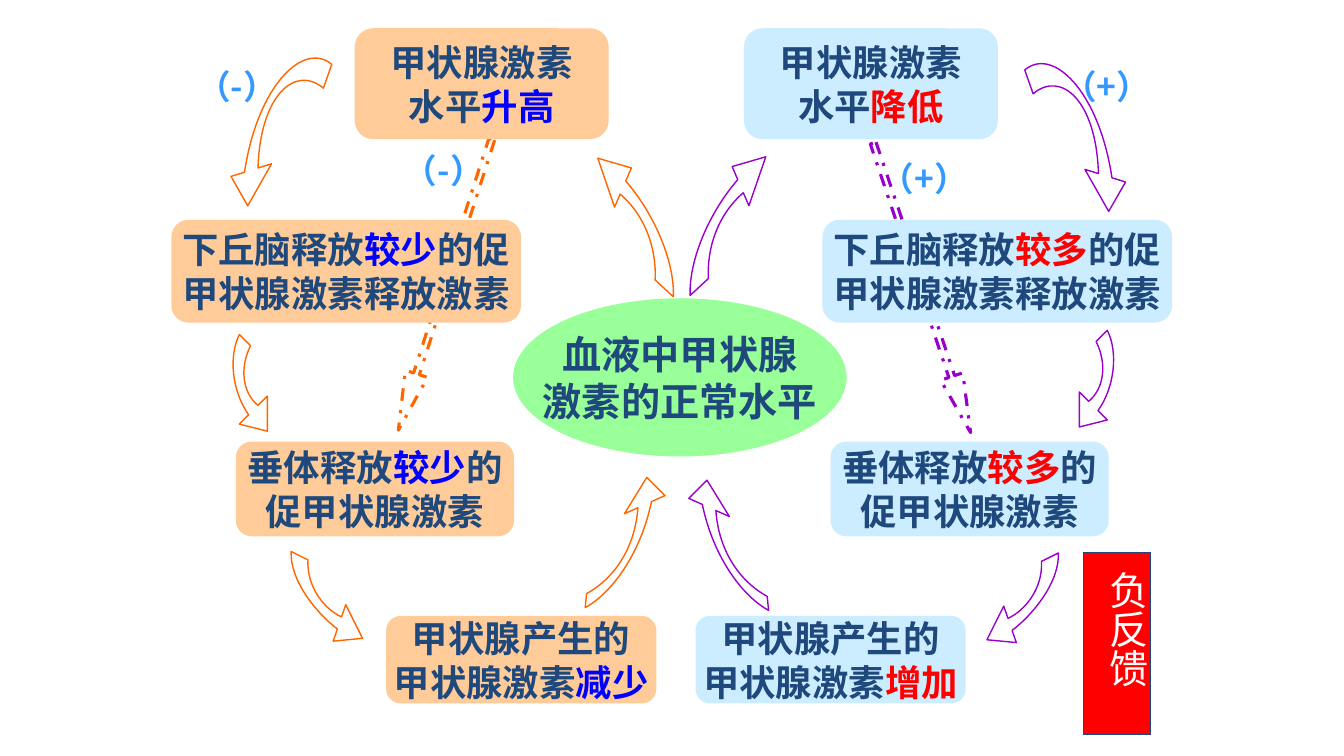
from dataclasses import dataclass

import lxml.etree
import pptx
import pptx.dml.color
import pptx.enum.dml
import pptx.enum.shapes
import pptx.enum.text
import pptx.oxml.ns
import pptx.util

Pt = pptx.util.Pt
SHAPE = pptx.enum.shapes.MSO_SHAPE
ALIGN = pptx.enum.text.PP_ALIGN
ANCHOR = pptx.enum.text.MSO_ANCHOR
qn = pptx.oxml.ns.qn


@dataclass(frozen=True)
class Theme:
    latin: str = "Calibri"
    cjk: str = "Noto Sans CJK SC"
    ink: str = "1F497D"
    white: str = "FFFFFF"
    sign: str = "3399FF"
    center: str = "99FF99"
    banner: str = "FF0000"
    sign_size: int = 24
    box_size: int = 26
    large_size: int = 28


@dataclass(frozen=True)
class Branch:
    fill: str
    accent: str
    arrow: str


RISE = Branch("FFCC99", "0000FF", "FF6600")
FALL = Branch("CCECFF", "FF0000", "9900CC")

STAGES = [
    (20.2, 181.4, 79.2, 253.4, 531.4, "甲状腺激素\n水平|{}", "升高", "降低"),
    (157, 249.8, 73.4, 122.4, 587.5, "下丘脑释放|{}|的促\n甲状腺激素释放激素", "较少", "较多"),
    (315.4, 198.7, 67.7, 168.5, 593.3, "垂体释放|{}|的\n促甲状腺激素", "较少", "较多"),
    (439.9, 193, 62.6, 275.8, 496.8, "甲状腺产生的\n甲状腺激素|{}", "减少", "增加"),
]

# fmt: off
ARROWS = [
    (969, -4, (738, 67), (732, 50), (752, 33), (785, 65), (804, 130), (792, 151), (775, 121)),
    (974, 1, (506, 199), (493, 211), (492, 189), (504, 155), (523, 119), (547, 112), (535, 147)),
    (962, 3, (783, 244), (791, 236), (799, 252), (796, 277), (791, 300), (771, 305), (771, 280)),
    (964, -1, (744, 401), (756, 395), (757, 415), (739, 438), (726, 459), (705, 457), (717, 433)),
    (967, -2, (548, 426), (549, 436), (529, 425), (509, 396), (492, 356), (505, 343), (521, 369)),
]


def blend(a, b, share):
    return tuple(m + (n - m) * share for m, n in zip(a, b))


def shift(point, start, end, share=1):
    return tuple(c + (n - m) * share for c, m, n in zip(point, start, end))


def arrow_outline(tail_in, tail_out, bend_1, bend_2, barb_out, tip, barb_in):
    neck_out = blend(barb_out, barb_in, 1 / 3)
    neck_in = blend(barb_out, barb_in, 2 / 3)
    inner_1 = shift(bend_1, tail_out, tail_in)
    inner_2 = shift(shift(bend_2, tail_out, tail_in, 0.5), neck_out, neck_in, 0.5)
    return [neck_in, inner_2, inner_1, tail_in, tail_out, bend_1, bend_2, neck_out,
            barb_out, tip, barb_in]


class Diagram:
    def __init__(self, s, theme):
        self.s = s
        self.theme = theme

    def paint(self, sp, fill=None, line=None, width=1):
        sp.shadow.inherit = False
        for part, color in ((sp.fill, fill), (sp.line.fill, line)):
            if color:
                part.solid()
                part.fore_color.rgb = pptx.dml.color.RGBColor.from_string(color)
            else:
                part.background()
        if line:
            sp.line.width = Pt(width)

    def shape(self, kind, x, y, w, h, **style):
        sp = self.s.shapes.add_shape(kind, Pt(x), Pt(y), Pt(w), Pt(h))
        self.paint(sp, **style)
        return sp

    def style_run(self, r, size, color, name, bold=True):
        r.font.size = Pt(size)
        r.font.bold = bold
        r.font.name = name
        r.font.color.rgb = pptx.dml.color.RGBColor.from_string(color)
        ea = lxml.etree.SubElement(r._r.get_or_add_rPr(), qn("a:ea"))
        ea.set("typeface", self.theme.cjk)

    def box(self, kind, bounds, fill, text, size, accent=None):
        sp = self.shape(kind, *bounds, fill=fill)
        tf = sp.text_frame
        tf.word_wrap = False
        tf.vertical_anchor = ANCHOR.MIDDLE
        for i, line in enumerate(text.split("\n")):
            p = tf.add_paragraph() if i else tf.paragraphs[0]
            p.alignment = ALIGN.CENTER
            for j, part in enumerate(line.split("|")):
                r = p.add_run()
                r.text = part
                self.style_run(r, size, accent if j % 2 else self.theme.ink, self.theme.latin)

    def sign(self, x, y, text):
        tf = self.s.shapes.add_textbox(Pt(x), Pt(y), Pt(90.7), Pt(36)).text_frame
        tf.word_wrap = True
        tf.text = text
        self.style_run(tf.paragraphs[0].runs[0], self.theme.sign_size, self.theme.sign, self.theme.cjk)

    def dashed_arrow(self, x, y, rotation, color):
        sp = self.shape(SHAPE.RIGHT_ARROW, x, y, 218.2, 16.6, line=color, width=2.25)
        sp.adjustments[0], sp.adjustments[1] = 0.257, 2.543
        sp.rotation = rotation
        sp.line.dash_style = pptx.enum.dml.MSO_LINE.DASH_DOT

    def curved_arrow(self, outline, color):
        start, *rest = [(Pt(x), Pt(y)) for x, y in outline]
        builder = self.s.shapes.build_freeform(*start)
        builder.add_line_segments(rest, close=True)
        sp = builder.convert_to_shape()
        self.paint(sp, line=color)
        segments = list(sp._element.iter(qn("a:lnTo")))
        for i in (0, 4):
            curve = lxml.etree.Element(qn("a:cubicBezTo"))
            segments[i].addprevious(curve)
            for segment in segments[i:i + 3]:
                curve.append(segment[0])
                segment.getparent().remove(segment)

    def banner(self, x, y, w, h, text):
        sp = self.shape(SHAPE.RECTANGLE, x, y, w, h, fill=self.theme.banner, line=self.theme.ink, width=0.75)
        tf = sp.text_frame
        tf._txBody.bodyPr.set("vert", "eaVert")
        tf.word_wrap = True
        tf.vertical_anchor = ANCHOR.TOP
        tf.margin_left = tf.margin_right = 0
        tf.margin_top = Pt(13)
        tf.text = text
        p = tf.paragraphs[0]
        p.alignment = ALIGN.LEFT
        self.style_run(p.runs[0], self.theme.large_size, self.theme.white, self.theme.cjk, bold=False)


def main():
    prs = pptx.Presentation()
    prs.slide_width, prs.slide_height = Pt(960), Pt(540)
    theme = Theme()
    d = Diagram(prs.slides.add_slide(prs.slide_layouts[6]), theme)
    d.dashed_arrow(208.8, 195.1, 107.8, RISE.arrow)
    d.dashed_arrow(549.4, 197.3, 71.4, FALL.arrow)
    d.box(SHAPE.OVAL, (366.5, 213.1, 238.3, 113), theme.center,
          "血液中甲状腺\n激素的正常水平", theme.large_size)
    for y, w, h, left, right, text, less, more in STAGES:
        for branch, x, word in ((RISE, left, less), (FALL, right, more)):
            d.box(SHAPE.ROUNDED_RECTANGLE, (x, y, w, h), branch.fill,
                  text.format(word), theme.box_size, branch.accent)
    for mirror, drop, *points in ARROWS:
        outline = arrow_outline(*points)
        d.curved_arrow(outline, FALL.arrow)
        d.curved_arrow([(mirror - x, y + drop) for x, y in outline], RISE.arrow)
    for x, y, text in ((281.5, 103.7, "（-）"), (622.1, 109.4, "（+）"),
                       (752.4, 43.2, "（+）"), (133.9, 43.2, "（-）")):
        d.sign(x, y, text)
    d.banner(774, 394.6, 48.2, 130.3, "负反馈")
    prs.save("out.pptx")


if __name__ == "__main__":
    main()
